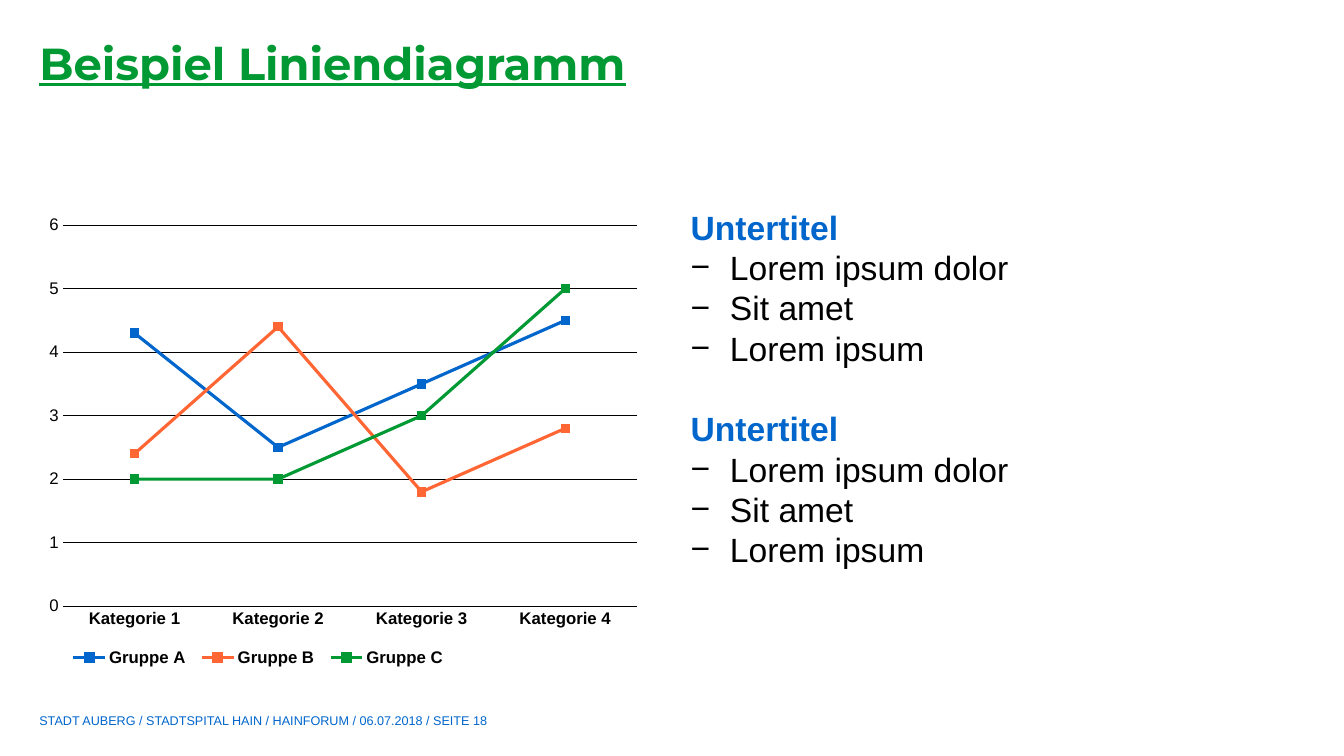
"""Builds a slide with a line chart beside a bulleted list."""
from dataclasses import dataclass
from typing import Optional

from lxml.etree import SubElement
from pptx import Presentation
from pptx.chart.data import CategoryChartData
from pptx.dml.color import RGBColor
from pptx.enum.chart import XL_CHART_TYPE, XL_LEGEND_POSITION, XL_MARKER_STYLE, XL_TICK_MARK
from pptx.enum.text import MSO_ANCHOR, MSO_AUTO_SIZE, PP_ALIGN
from pptx.oxml import parse_xml
from pptx.oxml.ns import nsdecls, qn
from pptx.util import Emu, Pt

PX = 9144
COLORS = {"blue": "0066CC", "orange": "FF6633", "green": "009933", "black": "000000"}
LINE_HEIGHT = Pt(28.8)


@dataclass(frozen=True)
class Box:
    """Left, top, width and height in px."""
    x: int
    y: int
    w: int
    h: int

    def emu(self) -> tuple:
        """Return the four lengths in EMU."""
        return tuple(Emu(v * PX) for v in (self.x, self.y, self.w, self.h))


@dataclass(frozen=True)
class Group:
    """One line of the chart."""
    name: str
    values: tuple
    color: str


@dataclass(frozen=True)
class Section:
    """A subtitle with its list items."""
    title: str
    items: tuple


TITLE_BOX = Box(39, 35, 1254, 113)
CHART_BOX = Box(38, 205, 606, 461)
BODY_BOX = Box(685, 205, 606, 461)
FOOTER_BOX = Box(39, 709, 559, 16)
CATEGORIES = [f"Kategorie {n}" for n in range(1, 5)]
GROUPS = [
    Group("Gruppe A", (4.3, 2.5, 3.5, 4.5), "blue"),
    Group("Gruppe B", (2.4, 4.4, 1.8, 2.8), "orange"),
    Group("Gruppe C", (2, 2, 3, 5), "green"),
]
SECTIONS = [Section("Untertitel", ("Lorem ipsum dolor", "Sit amet", "Lorem ipsum"))] * 2


def rgb(name: str) -> RGBColor:
    """Look up a named colour."""
    return RGBColor.from_string(COLORS[name])


def style(font, size: int, color: str, bold: bool = False, name: str = "Arial") -> None:
    """Format a font."""
    font.size, font.bold, font.name = Pt(size), bold, name
    font.color.rgb = rgb(color)


def setup_frame(s, box: Box, wrap: bool = True):
    """Place a text shape and return its frame without insets."""
    s.left, s.top, s.width, s.height = box.emu()
    tf = s.text_frame
    tf.margin_left = tf.margin_top = tf.margin_right = tf.margin_bottom = 0
    tf.auto_size, tf.vertical_anchor = MSO_AUTO_SIZE.NONE, MSO_ANCHOR.TOP
    tf.word_wrap = wrap
    return tf


def add_run(p, text: str, size: int, color: str, bold: bool = False, name: str = "Arial"):
    """Append a formatted run to a left-aligned paragraph."""
    p.alignment = PP_ALIGN.LEFT
    r = p.add_run()
    r.text = text
    style(r.font, size, color, bold, name)
    return r


def set_bullet(p, char: Optional[str] = None) -> None:
    """Give a paragraph a hanging bullet, or none."""
    pPr = p._p.get_or_add_pPr()
    indent = 39 * PX if char else 0
    pPr.set("marL", str(indent))
    pPr.set("indent", str(-indent))
    if char:
        SubElement(pPr, qn("a:buChar")).set("char", char)
    else:
        SubElement(pPr, qn("a:buNone"))


def add_body(s) -> None:
    """Fill the body with subtitles and lists."""
    tf = setup_frame(s, BODY_BOX)
    p = tf.paragraphs[0]
    for i, section in enumerate(SECTIONS):
        for j, text in enumerate((section.title, *section.items)):
            if i or j:
                p = tf.add_paragraph()
            is_title = j == 0
            p.line_spacing = LINE_HEIGHT
            p.space_before = LINE_HEIGHT if i and is_title else Pt(0)
            set_bullet(p, None if is_title else "−")
            add_run(p, text, 24, "blue" if is_title else "black", is_title)


def set_layout(parent, x: float, y: float, w: float, h: float, inner: bool = False) -> None:
    """Fix the place of a chart part as fractions of the chart."""
    target = '<c:layoutTarget val="inner"/>' if inner else ""
    parts = "".join(f'<c:{k} val="{v}"/>' for k, v in zip("xywh", (x, y, w, h)))
    layout = parse_xml(
        f'<c:layout {nsdecls("c")}><c:manualLayout>{target}'
        f'<c:xMode val="edge"/><c:yMode val="edge"/>{parts}</c:manualLayout></c:layout>')
    for old in parent.findall(qn("c:layout")):
        parent.remove(old)
    legend_pos = parent.find(qn("c:legendPos"))
    if legend_pos is None:
        parent.insert(0, layout)
    else:
        legend_pos.addnext(layout)


def set_line(line, color: str, width: float) -> None:
    """Colour a line and set its width."""
    line.color.rgb = rgb(color)
    line.width = Pt(width)


def add_line_chart(slide) -> None:
    """Draw the line chart with its legend."""
    data = CategoryChartData()
    data.categories = CATEGORIES
    for group in GROUPS:
        data.add_series(group.name, group.values)
    chart = slide.shapes.add_chart(XL_CHART_TYPE.LINE_MARKERS, *CHART_BOX.emu(), data).chart
    style(chart.font, 10, "black")
    chart.has_title = False
    cat, val = chart.category_axis, chart.value_axis
    for axis in (cat, val):
        axis.major_tick_mark = axis.minor_tick_mark = XL_TICK_MARK.NONE
        style(axis.tick_labels.font, 12, "black", axis is cat)
    set_line(cat.format.line, "black", 0.75)
    val.format.line.fill.background()
    val.minimum_scale, val.maximum_scale, val.major_unit = 0, 6, 1
    set_line(val.major_gridlines.format.line, "black", 0.75)
    for group, series in zip(GROUPS, chart.plots[0].series):
        series.smooth = False
        set_line(series.format.line, group.color, 2.25)
        marker = series.marker
        marker.style, marker.size = XL_MARKER_STYLE.SQUARE, 6
        marker.format.fill.solid()
        marker.format.fill.fore_color.rgb = rgb(group.color)
        marker.format.line.color.rgb = rgb(group.color)
    chart.has_legend = True
    legend = chart.legend
    legend.position, legend.include_in_layout = XL_LEGEND_POSITION.BOTTOM, False
    style(legend.font, 12, "black", True)
    set_layout(chart._chartSpace.chart.plotArea, 0.04, 0.04, 0.94, 0.82, inner=True)
    set_layout(legend._element, 0.04, 0.94, 0.64, 0.06)


def main() -> None:
    """Build and save the slide."""
    prs = Presentation()
    prs.slide_width, prs.slide_height = Emu(1333 * PX), Emu(750 * PX)
    slide = prs.slides.add_slide(prs.slide_layouts[1])
    tf = setup_frame(slide.shapes.title, TITLE_BOX)
    r = add_run(tf.paragraphs[0], "Beispiel Liniendiagramm", 32, "green", True, "Montserrat")
    r.font.underline = True
    add_line_chart(slide)
    add_body(slide.placeholders[1])
    tf = setup_frame(slide.shapes.add_textbox(*FOOTER_BOX.emu()), FOOTER_BOX, wrap=False)
    p = tf.paragraphs[0]
    p.line_spacing = 0.9
    add_run(p, "STADT AUBERG / STADTSPITAL HAIN / HAINFORUM / 06.07.2018 / SEITE 18", 9, "blue")
    prs.save("out.pptx")


if __name__ == "__main__":
    main()
